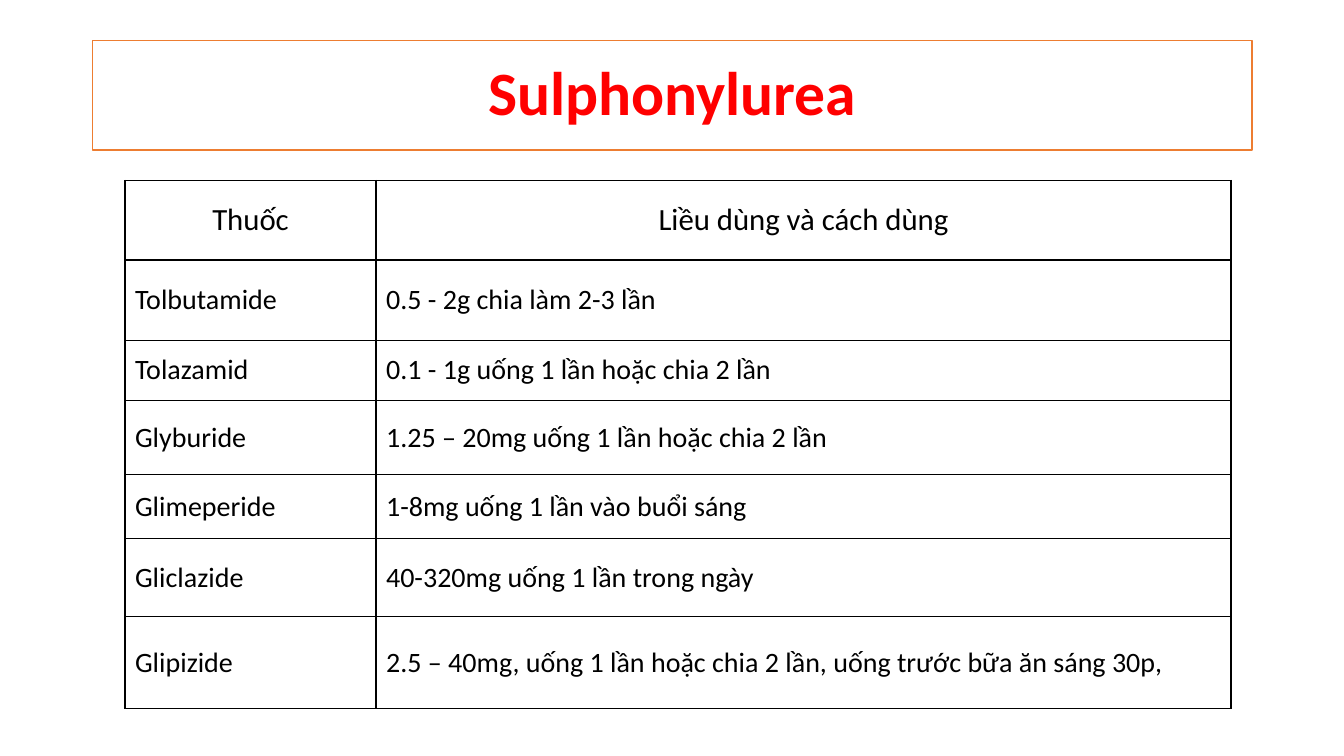
from dataclasses import dataclass

from lxml import etree
from pptx import Presentation
from pptx import util as u
from pptx.dml.color import RGBColor
from pptx.enum import shapes, text
from pptx.oxml import ns
from pptx.slide import Slide
from pptx.table import _Cell
from pptx.text.text import TextFrame

WIDTH, HEIGHT = u.Inches(13.33), u.Inches(7.5)
FONT = "Calibri"
BLACK, RED, ORANGE, WHITE = "000000", "FF0000", "ED7D31", "FFFFFF"
COLUMN_SHARES = (18.68, 63.62)


@dataclass(frozen=True)
class DrugRow:
    drug: str
    dose: str
    height: float
    size: int = 20
    align: text.PP_ALIGN = text.PP_ALIGN.LEFT


ROWS = (
    DrugRow("Thuốc", "Liều dùng và cách dùng", 10.53, 22, text.PP_ALIGN.CENTER),
    DrugRow("Tolbutamide", "0.5 - 2g chia làm 2-3 lần", 10.67),
    DrugRow("Tolazamid", "0.1 - 1g uống 1 lần hoặc chia 2 lần", 7.87),
    DrugRow("Glyburide", "1.25 – 20mg uống 1 lần hoặc chia 2 lần", 9.87),
    DrugRow("Glimeperide", "1-8mg uống 1 lần vào buổi sáng", 8.4),
    DrugRow("Gliclazide", "40-320mg uống 1 lần trong ngày", 10.4),
    DrugRow("Glipizide", "2.5 – 40mg, uống 1 lần hoặc chia 2 lần, uống trước bữa ăn sáng 30p,", 12.13),
)


def across(percent: float) -> int:
    return round(WIDTH * percent / 100)


def down(percent: float) -> int:
    return round(HEIGHT * percent / 100)


def colour(code: str) -> RGBColor:
    return RGBColor.from_string(code)


def write(frame: TextFrame, words: str, size: int, code: str,
          align: text.PP_ALIGN, bold: bool = False) -> None:
    frame.word_wrap = True
    para = frame.paragraphs[0]
    para.alignment = align
    span = para.add_run()
    span.text = words
    span.font.name = FONT
    span.font.size = u.Pt(size)
    span.font.bold = bold
    span.font.color.rgb = colour(code)


def add_borders(cell: _Cell, code: str, points: float) -> None:
    properties = cell._tc.get_or_add_tcPr()
    for side in ("lnL", "lnR", "lnT", "lnB"):
        line = etree.SubElement(properties, ns.qn(f"a:{side}"), w=str(u.Pt(points)))
        fill = etree.SubElement(line, ns.qn("a:solidFill"))
        etree.SubElement(fill, ns.qn("a:srgbClr"), val=code)


def add_title(page: Slide, words: str) -> None:
    box = page.shapes.add_shape(shapes.MSO_SHAPE.RECTANGLE, across(6.9), down(5.33),
                                across(86.27), down(14.53))
    box.shadow.inherit = False
    box.fill.solid()
    box.fill.fore_color.rgb = colour(WHITE)
    box.line.color.rgb = colour(ORANGE)
    box.line.width = u.Pt(1)
    box.text_frame.vertical_anchor = text.MSO_ANCHOR.MIDDLE
    write(box.text_frame, words, 44, RED, text.PP_ALIGN.CENTER, True)
    box.text_frame.paragraphs[0].line_spacing = 0.9


def add_dose_table(page: Slide) -> None:
    table = page.shapes.add_table(
        len(ROWS), len(COLUMN_SHARES), across(9.3), down(23.87),
        across(sum(COLUMN_SHARES)), down(sum(row.height for row in ROWS))).table
    table.first_row = False
    table.horz_banding = False
    for column, share in zip(table.columns, COLUMN_SHARES):
        column.width = across(share)
    for line, row in zip(table.rows, ROWS):
        line.height = down(row.height)
        for cell, words in zip(line.cells, (row.drug, row.dose)):
            add_borders(cell, BLACK, 1)
            cell.fill.background()
            cell.vertical_anchor = text.MSO_ANCHOR.MIDDLE
            write(cell.text_frame, words, row.size, BLACK, row.align)


def main() -> None:
    deck = Presentation()
    deck.slide_width, deck.slide_height = WIDTH, HEIGHT
    page = deck.slides.add_slide(deck.slide_layouts[6])
    add_title(page, "Sulphonylurea")
    add_dose_table(page)
    deck.save("out.pptx")


if __name__ == "__main__":
    main()
